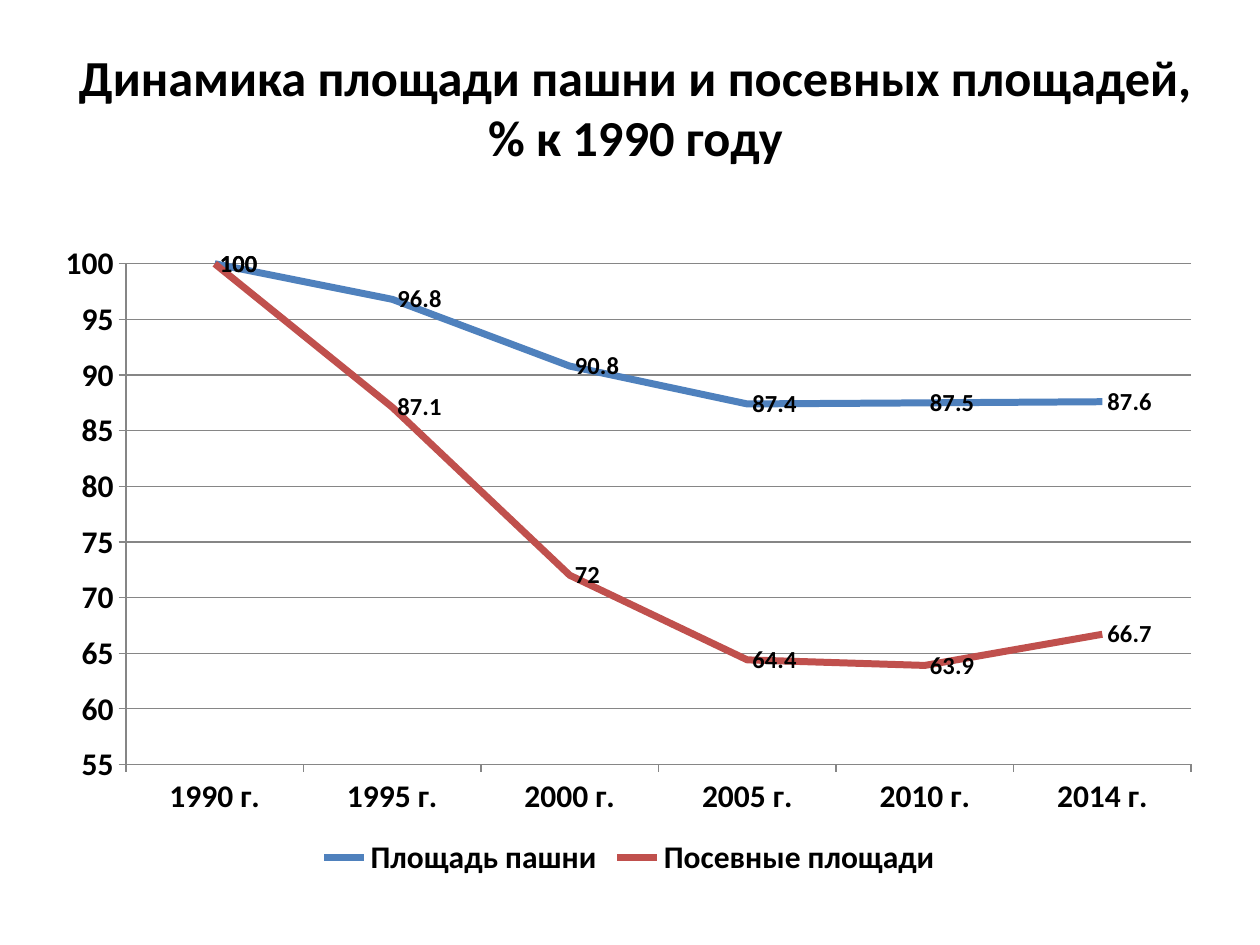
from lxml.etree import SubElement
from pptx import Presentation
from pptx.chart.data import CategoryChartData
from pptx.dml.color import RGBColor as RGB
from pptx.enum.chart import (XL_CHART_TYPE as ChartType, XL_LABEL_POSITION as LabelPos,
                             XL_LEGEND_POSITION as LegendPos, XL_MARKER_STYLE as Marker,
                             XL_TICK_MARK as Tick)
from pptx.enum.text import MSO_ANCHOR as Anchor, PP_ALIGN as Align
from pptx.oxml.ns import qn
from pptx.util import Pt

# Content
TITLE = "Динамика площади пашни и посевных площадей,\v% к 1990 году"
YEARS = ["1990 г.", "1995 г.", "2000 г.", "2005 г.", "2010 г.", "2014 г."]
AREAS = [
    ("Площадь пашни", "4F81BD", (100, 96.8, 90.8, 87.4, 87.5, 87.6)),
    ("Посевные площади", "C0504D", (100, 87.1, 72, 64.4, 63.9, 66.7)),
]

# Theme and layout
THEME = {"font": "Calibri", "text": "000000", "grid": "868686",
         "title": 28.8, "axis": 18, "label": 14, "line": 4, "hairline": 0.75}
SLIDE = (720, 540)
TITLE_BOX = (20.16, 21.6, 686.16, 78.48)
CHART_BOX = (25.2, 128.16, 668.88, 376.56)
PLOT = {"x": 0.07, "y": 0.06, "w": 0.91, "h": 0.76}
VALUE_SCALE = {"minimum_scale": 55, "maximum_scale": 100, "major_unit": 5,
               "has_major_gridlines": True}


def points(box):
    return [Pt(length) for length in box]


def style_font(font, size):
    formats = {"name": THEME["font"], "size": Pt(size), "bold": True}
    for key, value in formats.items():
        setattr(font, key, value)
    font.color.rgb = RGB.from_string(THEME["text"])


def style_line(line, color, width):
    line.color.rgb = RGB.from_string(color)
    line.width = Pt(width)


def place_plot(chart):
    """Fix the inner plot area as fractions of the chart."""
    plot_area = chart.plots[0]._element.getparent()
    layout = plot_area.find(qn("c:layout"))
    if layout is None:
        layout = plot_area.makeelement(qn("c:layout"))
        plot_area.insert(0, layout)
    manual = SubElement(layout, qn("c:manualLayout"))
    settings = {"layoutTarget": "inner", "xMode": "edge", "yMode": "edge", **PLOT}
    for tag, value in settings.items():
        SubElement(manual, qn(f"c:{tag}")).set("val", str(value))


def add_title(slide):
    frame = slide.shapes.add_textbox(*points(TITLE_BOX)).text_frame
    frame.word_wrap = True
    frame.vertical_anchor = Anchor.MIDDLE
    heading = frame.paragraphs[0]
    heading.text = TITLE
    heading.alignment = Align.CENTER
    for run in heading.runs:
        style_font(run.font, THEME["title"])


def add_area_chart(slide):
    areas = CategoryChartData(number_format="General")
    areas.categories = YEARS
    for name, _, values in AREAS:
        areas.add_series(name, values)
    chart = slide.shapes.add_chart(ChartType.LINE, *points(CHART_BOX), areas).chart
    style_font(chart.font, THEME["axis"])
    chart.has_title = False
    place_plot(chart)

    # Legend
    chart.has_legend = True
    chart.legend.position = LegendPos.BOTTOM
    chart.legend.include_in_layout = False
    style_font(chart.legend.font, THEME["axis"])

    # Axes and gridlines
    for key, value in VALUE_SCALE.items():
        setattr(chart.value_axis, key, value)
    for axis in (chart.category_axis, chart.value_axis):
        axis.major_tick_mark = Tick.OUTSIDE
        axis.minor_tick_mark = Tick.NONE
        style_font(axis.tick_labels.font, THEME["axis"])
        style_line(axis.format.line, THEME["grid"], THEME["hairline"])
    style_line(chart.value_axis.major_gridlines.format.line, THEME["grid"], THEME["hairline"])

    # Series and value labels
    chart.plots[0].vary_by_categories = False
    for series, (_, color, _) in zip(chart.plots[0].series, AREAS):
        series.smooth = False
        series.marker.style = Marker.NONE
        style_line(series.format.line, color, THEME["line"])
        series.data_labels.show_value = True
        series.data_labels.position = LabelPos.RIGHT
        style_font(series.data_labels.font, THEME["label"])


def main():
    deck = Presentation()
    deck.slide_width, deck.slide_height = points(SLIDE)
    slide = deck.slides.add_slide(deck.slide_layouts[6])
    add_title(slide)
    add_area_chart(slide)
    deck.save("out.pptx")


if __name__ == "__main__":
    main()
